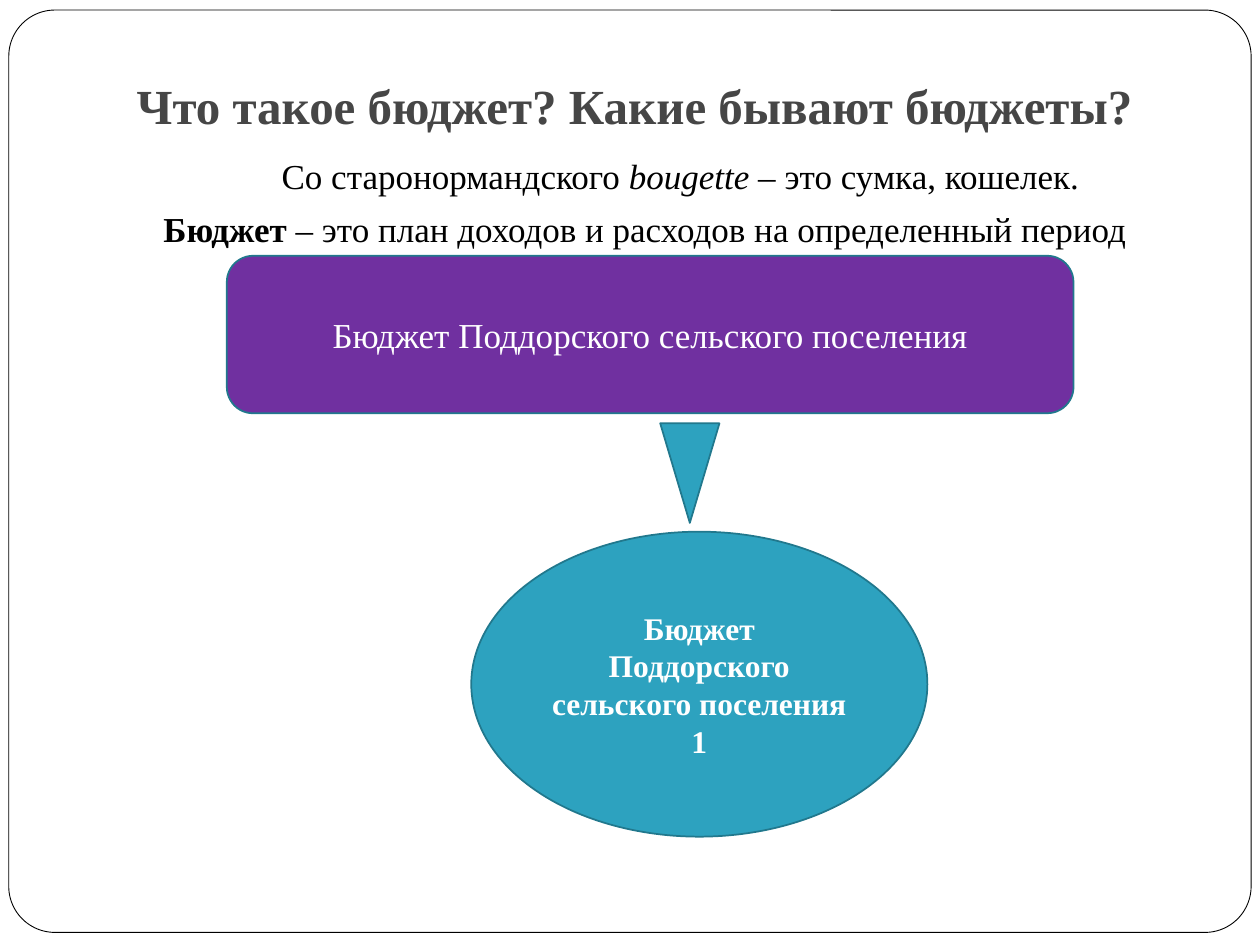
from pptx import Presentation
from pptx.dml.color import RGBColor
from pptx.enum import shapes, text
from pptx.util import Inches, Pt

FONT = "Times New Roman"
WHITE, BLACK, TEAL, EDGE = "FFFFFF", "000000", "2DA2BF", "21788D"
KIND = shapes.MSO_SHAPE


def rgb(value):
    return RGBColor.from_string(value)


def box(left, top, width, height):
    return [Inches(n) for n in (left, top, width, height)]


def add_run(paragraph, words, size, color, bold=False, italic=False):
    run = paragraph.add_run()
    run.text = words
    font = run.font
    font.name, font.size, font.bold, font.italic = FONT, Pt(size), bold, italic
    font.color.rgb = rgb(color)


def write(frame, paragraphs, size, color, anchor):
    """Fill a frame with centred paragraphs of (words, bold, italic) runs."""
    frame.word_wrap = True
    frame.vertical_anchor = anchor
    for number, runs in enumerate(paragraphs):
        paragraph = frame.add_paragraph() if number else frame.paragraphs[0]
        paragraph.alignment = text.PP_ALIGN.CENTER
        for words, bold, italic in runs:
            add_run(paragraph, words, size, color, bold, italic)


def add_block(slide, kind, place, fill, line=EDGE, weight=1):
    block = slide.shapes.add_shape(kind, *place)
    block.shadow.inherit = False
    block.fill.solid()
    block.fill.fore_color.rgb = rgb(fill)
    block.line.color.rgb = rgb(line)
    block.line.width = Pt(weight)
    return block


def add_page_frame(slide, place):
    page = add_block(slide, KIND.ROUNDED_RECTANGLE, place, WHITE, BLACK, 0.5)
    page.adjustments[0] = 0.05
    slide.shapes._spTree.insert(2, page._element)  # behind the title


def set_title(slide, place):
    title = slide.shapes.title
    title.left, title.top, title.width, title.height = place
    title.text_frame.margin_bottom = Inches(0.1)
    write(title.text_frame, [[("Что такое бюджет? Какие бывают бюджеты?", True, False)]],
          28, "464646", text.MSO_ANCHOR.BOTTOM)


def add_definitions(slide, place):
    frame = slide.shapes.add_textbox(*place).text_frame
    write(frame, [
        [("Со старонормандского ", False, False), ("bougette – ", False, True),
         ("это сумка, кошелек.", False, False)],
        [("Бюджет ", True, False),
         ("– это план доходов и расходов на определенный период", False, False)],
    ], 20, BLACK, text.MSO_ANCHOR.TOP)
    origin, meaning = frame.paragraphs
    origin._p.get_or_add_pPr().set("marL", str(Inches(0.56)))
    meaning.space_before = Pt(6)


def add_budget_diagram(slide, left, top):
    """Draw the budget bar, the pointer below it and the settlement's ellipse."""
    settlement = "Бюджет Поддорского сельского поселения"
    middle = text.MSO_ANCHOR.MIDDLE

    bar = add_block(slide, KIND.ROUNDED_RECTANGLE, box(left, top, 6.72, 1.25), "7030A0")
    write(bar.text_frame, [[(settlement, False, False)]], 20, WHITE, middle)

    pointer = add_block(slide, KIND.ISOSCELES_TRIANGLE,
                        box(left + 3.44, top + 1.33, 0.47, 0.79), TEAL)
    pointer.rotation = 180

    ellipse = add_block(slide, KIND.OVAL, box(left + 1.94, top + 2.19, 3.62, 2.42), TEAL)
    write(ellipse.text_frame, [[(settlement, True, False)], [("1", True, False)]],
          18, WHITE, middle)


def main():
    deck = Presentation()
    deck.slide_width, deck.slide_height = Inches(10), Inches(7.5)
    slide = deck.slides.add_slide(deck.slide_layouts.get_by_name("Title Only"))
    add_page_frame(slide, box(0.07, 0.08, 9.86, 7.32))
    set_title(slide, box(0.23, 0.39, 9.61, 0.78))
    add_definitions(slide, box(0.47, 1.18, 9.3, 0.85))
    add_budget_diagram(slide, 1.8, 2.03)
    deck.save("out.pptx")


if __name__ == "__main__":
    main()
